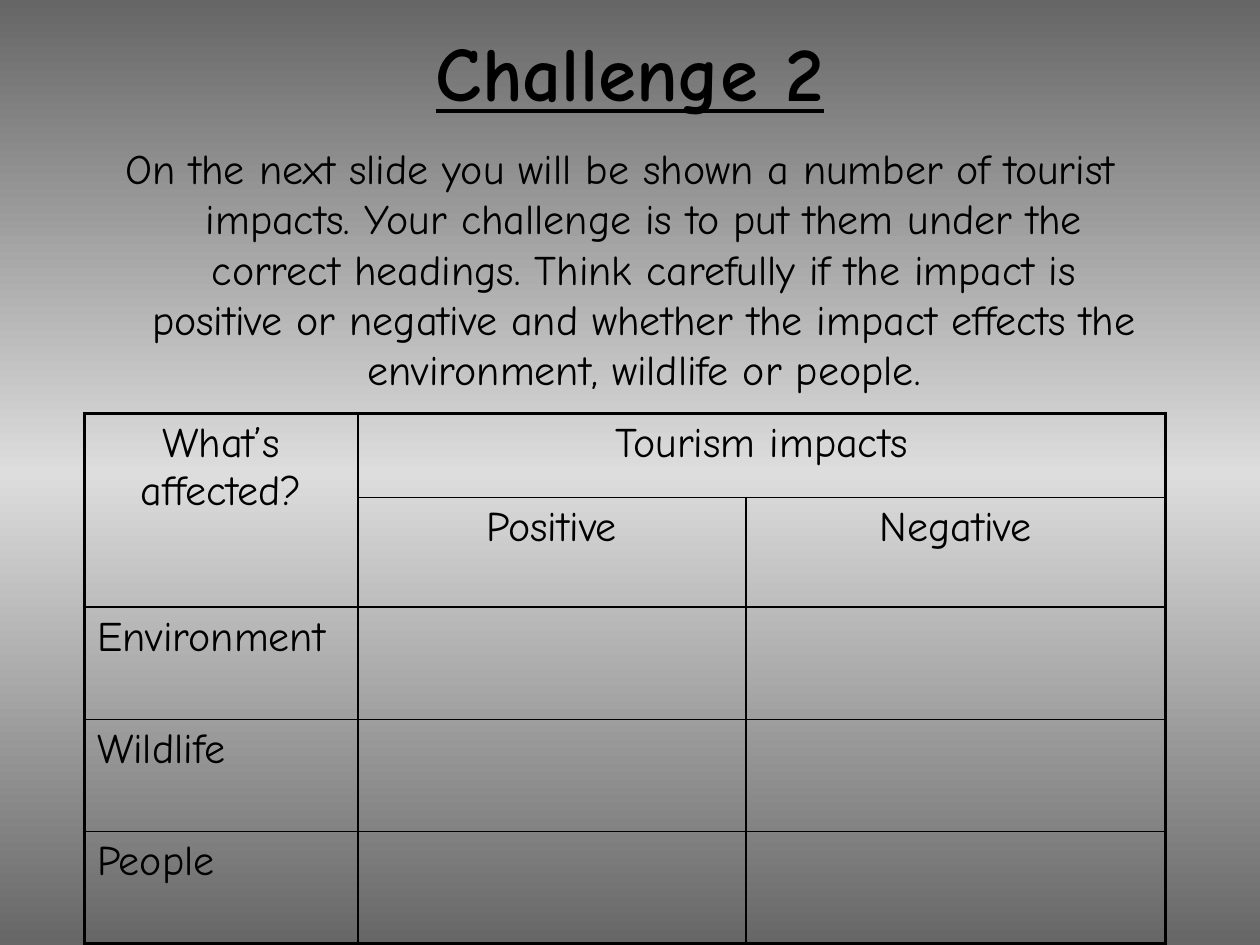
import copy

import pptx
import pptx.dml.color
import pptx.enum.text
import pptx.oxml
import pptx.oxml.ns
import pptx.util
from pptx.util import Inches

COLORS = {"ink": "000000", "dark": "666666", "light": "DDDDDD"}
FONT = "Comic Neue"
CENTER = pptx.enum.text.PP_ALIGN.CENTER
LEFT = pptx.enum.text.PP_ALIGN.LEFT
MIDDLE = pptx.enum.text.MSO_ANCHOR.MIDDLE
TOP = pptx.enum.text.MSO_ANCHOR.TOP

COLUMN_WIDTHS = [2.17, 3.08, 3.33]
ROW_HEIGHTS = [0.67, 0.87, 0.89, 0.89, 0.89]
HEADINGS = {(0, 0): "What’s affected?", (0, 1): "Tourism impacts",
            (1, 1): "Positive", (1, 2): "Negative"}
AFFECTED = ["Environment", "Wildlife", "People"]
OUTER_LINE, INNER_LINE = 2.25, 1
INSTRUCTIONS = (
    "On the next slide you will be shown a number of tourist impacts. "
    "Your challenge is to put them under the correct headings. "
    "Think carefully if the impact is positive or negative and whether "
    "the impact effects the environment, wildlife or people."
)


def rgb(name):
    return pptx.dml.color.RGBColor.from_string(COLORS[name])


def write(frame, text, size=24, align=CENTER, bold=False, underline=False,
          hanging=0):
    paragraph = frame.paragraphs[0]
    paragraph.alignment = align
    if hanging:
        properties = paragraph._p.get_or_add_pPr()
        properties.set("marL", str(Inches(hanging)))
        properties.set("indent", str(-Inches(hanging)))
    run = paragraph.add_run()
    run.text = text
    run.font.name = FONT
    run.font.size = pptx.util.Pt(size)
    run.font.bold = bold
    run.font.underline = underline
    run.font.color.rgb = rgb("ink")


def add_text(slide, text, left, top, width, height, anchor=TOP, **text_format):
    frame = slide.shapes.add_textbox(
        Inches(left), Inches(top), Inches(width), Inches(height)).text_frame
    frame.word_wrap = True
    frame.vertical_anchor = anchor
    write(frame, text, **text_format)


def paint_background(slide):
    fill = slide.background.fill
    fill.gradient()
    fill.gradient_angle = 270
    first, last = fill.gradient_stops
    first._gs.addnext(copy.deepcopy(first._gs))
    for stop, position, color in zip(fill.gradient_stops, (0, 0.5, 1),
                                     ("dark", "light", "dark")):
        stop.position = position
        stop.color.rgb = rgb(color)


def set_borders(cell, outer_sides):
    properties = cell._tc.get_or_add_tcPr()
    for side in "LRTB":
        points = OUTER_LINE if side in outer_sides else INNER_LINE
        properties.append(pptx.oxml.parse_xml(
            f'<a:ln{side} {pptx.oxml.ns.nsdecls("a")} w="{pptx.util.Pt(points)}">'
            f'<a:solidFill><a:srgbClr val="{COLORS["ink"]}"/></a:solidFill>'
            f'</a:ln{side}>'))


def add_impact_table(slide):
    row_count, column_count = len(ROW_HEIGHTS), len(COLUMN_WIDTHS)
    table = slide.shapes.add_table(
        row_count, column_count, Inches(0.67), Inches(3.28),
        Inches(sum(COLUMN_WIDTHS)), Inches(sum(ROW_HEIGHTS))).table
    table.first_row = table.horz_banding = False
    for column, width in zip(table.columns, COLUMN_WIDTHS):
        column.width = Inches(width)
    for row, height in zip(table.rows, ROW_HEIGHTS):
        row.height = Inches(height)

    # Headings span two rows and two columns
    affected_heading = table.cell(0, 0)
    affected_heading.merge(table.cell(1, 0))
    table.cell(0, 1).merge(table.cell(0, 2))

    # Heavy frame, thin inner lines, no fill
    for r in range(row_count):
        for c in range(column_count):
            cell = table.cell(r, c)
            last_column = c + (cell.span_width if cell.is_merge_origin else 1)
            edges = {"L": c == 0, "R": last_column == column_count,
                     "T": r == 0, "B": r == row_count - 1}
            set_borders(cell, [side for side, outer in edges.items() if outer])
            cell.fill.background()

    for (r, c), heading in HEADINGS.items():
        write(table.cell(r, c).text_frame, heading)
    # The two-line heading must not stretch its row
    affected_heading.margin_bottom = 0
    for r, name in enumerate(AFFECTED, start=2):
        write(table.cell(r, 0).text_frame, name, align=LEFT)


def main():
    deck = pptx.Presentation()
    deck.slide_width, deck.slide_height = Inches(10), Inches(7.5)
    slide = deck.slides.add_slide(deck.slide_layouts[6])
    paint_background(slide)

    # Title and task
    add_text(slide, "Challenge 2", 0.75, 0.06, 8.5, 1, anchor=MIDDLE,
             size=44, bold=True, underline=True)
    add_text(slide, INSTRUCTIONS, 0.67, 1.08, 8.5, 2.15, hanging=0.38)

    # Sorting grid
    add_impact_table(slide)
    deck.save("out.pptx")


if __name__ == "__main__":
    main()
